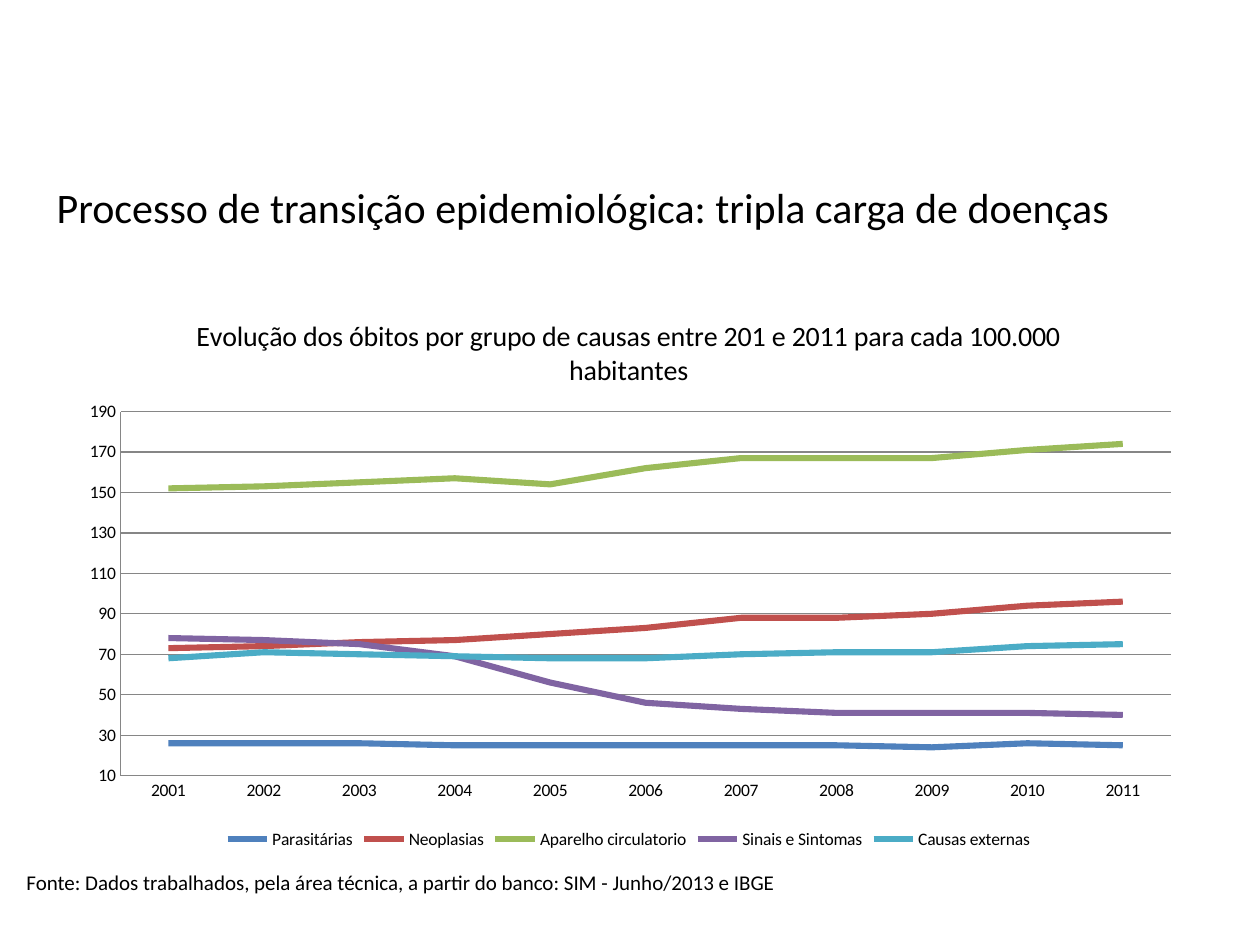
from pptx import Presentation
from pptx.chart.data import CategoryChartData
from pptx.dml.color import RGBColor
from pptx.enum.chart import XL_CHART_TYPE, XL_LEGEND_POSITION, XL_TICK_MARK
from pptx.enum.text import MSO_ANCHOR, PP_ALIGN
from pptx.oxml import parse_xml
from pptx.oxml.ns import nsdecls, qn
from pptx.util import Inches, Pt

BLACK = RGBColor(0, 0, 0)
GRAY = RGBColor(0x86, 0x86, 0x86)
BLUE = RGBColor(0x4F, 0x81, 0xBD)
RED = RGBColor(0xC0, 0x50, 0x4D)
GREEN = RGBColor(0x9B, 0xBB, 0x59)
PURPLE = RGBColor(0x80, 0x64, 0xA2)
TEAL = RGBColor(0x4B, 0xAC, 0xC6)

WIDE, HIGH = Inches(10), Inches(7.5)
HEAD = "Processo de transição epidemiológica: tripla carga de doenças"
NOTE = ("Fonte: Dados trabalhados, pela área técnica, a partir do banco: "
        "SIM - Junho/2013 e IBGE")
TITLE = ("Evolução dos óbitos por grupo de causas entre 201 e 2011 "
         "para cada 100.000 habitantes")
YEARS = [str(year) for year in range(2001, 2012)]
DEATHS = [
    ("Parasitárias", BLUE, [26, 26, 26, 25, 25, 25, 25, 25, 24, 26, 25]),
    ("Neoplasias", RED, [73, 74, 76, 77, 80, 83, 88, 88, 90, 94, 96]),
    ("Aparelho circulatorio", GREEN,
     [152, 153, 155, 157, 154, 162, 167, 167, 167, 171, 174]),
    ("Sinais e Sintomas", PURPLE,
     [78, 77, 75, 69, 56, 46, 43, 41, 41, 41, 40]),
    ("Causas externas", TEAL, [68, 71, 70, 69, 68, 68, 70, 71, 71, 74, 75]),
]
# Share of the chart frame taken by the plot
PLOT = {"x": 0.05, "y": 0.21, "w": 0.93, "h": 0.65}


def share(x, y, w, h):
    """Turn hundredths of the slide into a box."""
    return [int(part * side / 100)
            for part, side in zip((x, y, w, h), (WIDE, HIGH) * 2)]


def apply(item, form):
    for name, value in form.items():
        setattr(item, name, value)


def style(font, size):
    apply(font, {"name": "Calibri", "size": Pt(size), "bold": False})
    font.color.rgb = BLACK


def add_head(slide, box):
    head = slide.shapes.title
    apply(head, dict(zip(("left", "top", "width", "height"), box)))
    frame = head.text_frame
    apply(frame, {"text": HEAD, "vertical_anchor": MSO_ANCHOR.TOP,
                  "word_wrap": True})
    line = frame.paragraphs[0]
    line.alignment = PP_ALIGN.JUSTIFY
    style(line.runs[0].font, 24)


def add_note(slide, box):
    table = slide.shapes.add_table(1, 1, *box).table
    apply(table, {"first_row": False, "horz_banding": False})
    cell = table.cell(0, 0)
    edge = Inches(0.01)
    apply(cell, {"text": NOTE, "vertical_anchor": MSO_ANCHOR.BOTTOM,
                 "margin_left": edge, "margin_right": edge,
                 "margin_top": edge, "margin_bottom": 0})
    cell.fill.background()
    style(cell.text_frame.paragraphs[0].runs[0].font, 12)


def place_plot(chart):
    area = chart.element.find(".//" + qn("c:plotArea"))
    for old in area.findall(qn("c:layout")):
        area.remove(old)
    modes = "".join(f'<c:{key}Mode val="edge"/>' for key in "xy")
    sizes = "".join(f'<c:{key} val="{value}"/>' for key, value in PLOT.items())
    area.insert(0, parse_xml(
        f'<c:layout {nsdecls("c")}><c:manualLayout>'
        f'<c:layoutTarget val="inner"/>{modes}{sizes}'
        '</c:manualLayout></c:layout>'))


def add_graph(slide, box):
    data = CategoryChartData(number_format="0")
    data.categories = YEARS
    for name, _, values in DEATHS:
        data.add_series(name, values)
    chart = slide.shapes.add_chart(XL_CHART_TYPE.LINE, *box, data).chart
    style(chart.font, 10)

    # Title and legend
    frame = chart.chart_title.text_frame
    frame.text = TITLE
    style(frame.paragraphs[0].runs[0].font, 16)
    chart.has_legend = True
    apply(chart.legend, {"position": XL_LEGEND_POSITION.BOTTOM,
                         "include_in_layout": False})

    # Axes
    scale = chart.value_axis
    apply(scale, {"minimum_scale": 10, "maximum_scale": 190,
                  "major_unit": 20, "has_major_gridlines": True})
    apply(scale.tick_labels, {"number_format": "0",
                              "number_format_is_linked": False})
    for axis in (scale, chart.category_axis):
        axis.major_tick_mark = XL_TICK_MARK.NONE
        axis.format.line.color.rgb = GRAY
    scale.major_gridlines.format.line.color.rgb = GRAY

    # Lines
    plot = chart.plots[0]
    plot.vary_by_categories = False
    for line, (_, color, _) in zip(plot.series, DEATHS):
        line.smooth = False
        line.format.line.color.rgb = color
        line.format.line.width = Pt(3.5)
    place_plot(chart)


def main():
    deck = Presentation()
    apply(deck, {"slide_width": WIDE, "slide_height": HIGH})
    slide = deck.slides.add_slide(deck.slide_layouts[5])
    add_head(slide, share(3.5, 18.5, 93, 12.5))
    add_note(slide, share(2, 92, 69.3, 2.8))
    add_graph(slide, share(5.1, 31.1, 89.6, 59.3))
    deck.save("out.pptx")


if __name__ == "__main__":
    main()
